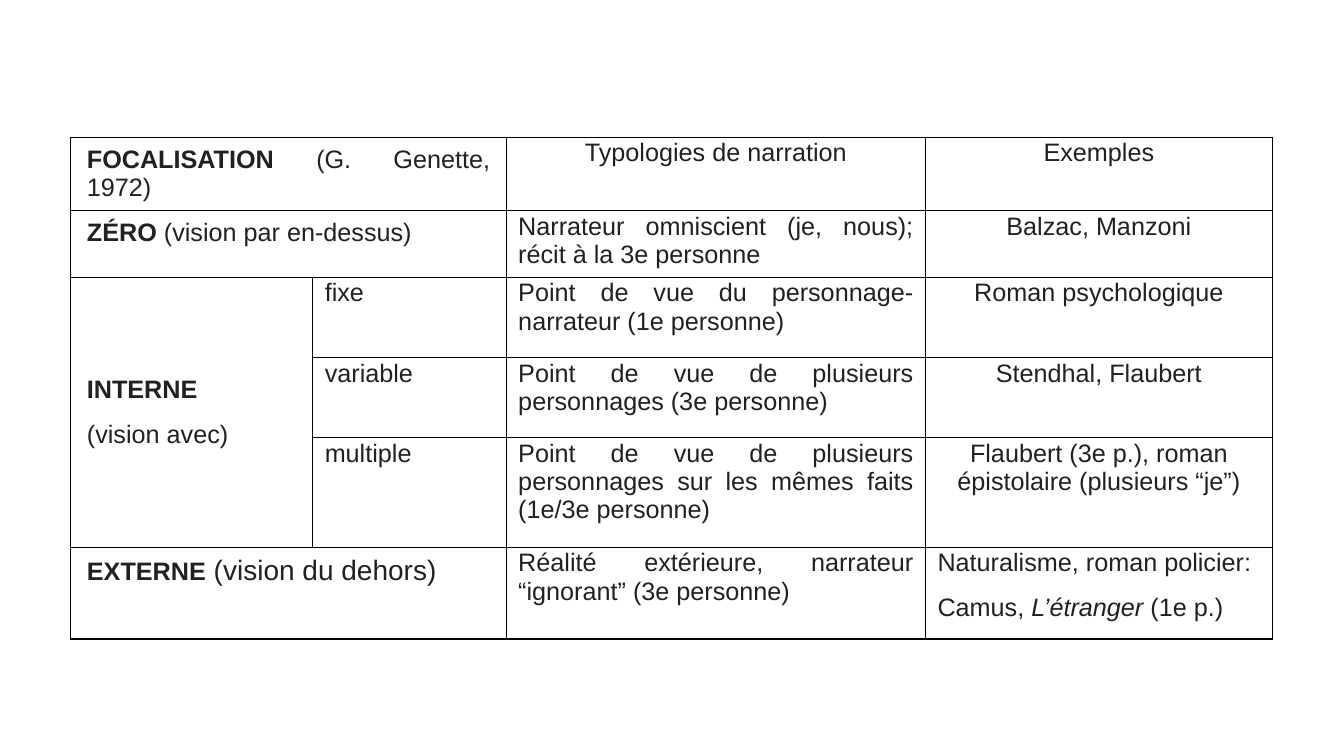
from dataclasses import dataclass

from lxml import etree
from pptx import Presentation
from pptx.dml.color import RGBColor
from pptx.enum.text import MSO_ANCHOR, PP_ALIGN
from pptx.oxml.ns import qn
from pptx.table import Table, _Cell
from pptx.util import Pt

JUSTIFY, CENTER = PP_ALIGN.JUSTIFY, PP_ALIGN.CENTER
TOP, MIDDLE = MSO_ANCHOR.TOP, MSO_ANCHOR.MIDDLE
INK = RGBColor(0x20, 0x21, 0x22)
BLACK = RGBColor(0x00, 0x00, 0x00)
WHITE = RGBColor(0xFF, 0xFF, 0xFF)
FONT = "Arial"
COL_WIDTHS = [172.8, 138.2, 299.5, 247.7]
ROW_HEIGHTS = [52.2, 47.8, 57.2, 57.2, 78.5, 65.7]
LABEL_INSETS = (11.5, 5.8, 11.5, 5.8)
BODY_INSETS = (8.6, 1.4, 8.6, 0)


@dataclass(frozen=True)
class Span:
    text: str
    bold: bool = False
    italic: bool = False
    size: float = 18


@dataclass(frozen=True)
class Entry:
    row: int
    col: int
    paragraphs: list[list[Span]]
    align: PP_ALIGN = JUSTIFY
    insets: tuple[float, float, float, float] = BODY_INSETS
    rows: int = 1
    cols: int = 1
    anchor: MSO_ANCHOR = TOP


def body(row: int, col: int, text: str, align: PP_ALIGN = JUSTIFY) -> Entry:
    return Entry(row, col, [[Span(text)]], align)


def label(row: int, name: str, detail: str, size: float = 18) -> Entry:
    spans = [Span(name, bold=True), Span(detail, size=size)]
    return Entry(row, 0, [spans], insets=LABEL_INSETS, cols=2)


ENTRIES = [
    label(0, "FOCALISATION ", "(G. Genette, 1972)"),
    body(0, 2, "Typologies de narration", CENTER),
    body(0, 3, "Exemples", CENTER),
    label(1, "ZÉRO", " (vision par en-dessus)"),
    body(1, 2, "Narrateur omniscient (je, nous); récit à la 3e personne"),
    body(1, 3, "Balzac, Manzoni", CENTER),
    Entry(2, 0, [[Span("INTERNE", bold=True)], [Span("(vision avec)")]],
          insets=LABEL_INSETS, rows=3, anchor=MIDDLE),
    body(2, 1, "fixe"),
    body(2, 2, "Point de vue du personnage-narrateur (1e personne)"),
    body(2, 3, "Roman psychologique", CENTER),
    body(3, 1, "variable"),
    body(3, 2, "Point de vue de plusieurs personnages (3e personne)"),
    body(3, 3, "Stendhal, Flaubert", CENTER),
    body(4, 1, "multiple"),
    body(4, 2, "Point de vue de plusieurs personnages sur les mêmes faits (1e/3e personne)"),
    body(4, 3, "Flaubert (3e p.), roman épistolaire (plusieurs “je”)", CENTER),
    label(5, "EXTERNE", " (vision du dehors)", 20),
    body(5, 2, "Réalité extérieure, narrateur “ignorant” (3e personne)"),
    Entry(5, 3, [[Span("Naturalisme, roman policier:")],
                 [Span("Camus, "), Span("L’étranger ", italic=True), Span("(1e p.)")]]),
]


def frame_cell(cell: _Cell) -> None:
    cell.fill.solid()
    cell.fill.fore_color.rgb = WHITE
    tc_pr = cell._tc.get_or_add_tcPr()
    for i, side in enumerate(("a:lnL", "a:lnR", "a:lnT", "a:lnB")):
        ln = etree.Element(qn(side), w=str(Pt(1)))
        fill = etree.SubElement(ln, qn("a:solidFill"))
        etree.SubElement(fill, qn("a:srgbClr"), val=str(BLACK))
        tc_pr.insert(i, ln)


def fill_entry(table: Table, entry: Entry) -> None:
    cell = table.cell(entry.row, entry.col)
    if entry.rows > 1 or entry.cols > 1:
        cell.merge(table.cell(entry.row + entry.rows - 1, entry.col + entry.cols - 1))
    cell.margin_left, cell.margin_top, cell.margin_right, cell.margin_bottom = map(Pt, entry.insets)
    cell.vertical_anchor = entry.anchor
    tf = cell.text_frame
    for i, spans in enumerate(entry.paragraphs):
        p = tf.add_paragraph() if i else tf.paragraphs[0]
        p.alignment = entry.align
        p.space_before = p.space_after = Pt(6)
        for span in spans:
            r = p.add_run()
            r.text = span.text
            r.font.name = FONT
            r.font.size = Pt(span.size)
            r.font.bold = span.bold
            r.font.italic = span.italic
            r.font.color.rgb = INK


def main() -> None:
    prs = Presentation()
    prs.slide_width, prs.slide_height = Pt(960), Pt(540)
    s = prs.slides.add_slide(prs.slide_layouts[6])
    table = s.shapes.add_table(
        len(ROW_HEIGHTS), len(COL_WIDTHS), Pt(50.6), Pt(98),
        Pt(sum(COL_WIDTHS)), Pt(sum(ROW_HEIGHTS))).table
    table.first_row = table.horz_banding = False
    for column, width in zip(table.columns, COL_WIDTHS):
        column.width = Pt(width)
    for row, height in zip(table.rows, ROW_HEIGHTS):
        row.height = Pt(height)
    for cell in table.iter_cells():
        frame_cell(cell)
    for entry in ENTRIES:
        fill_entry(table, entry)
    prs.save("out.pptx")


if __name__ == "__main__":
    main()
